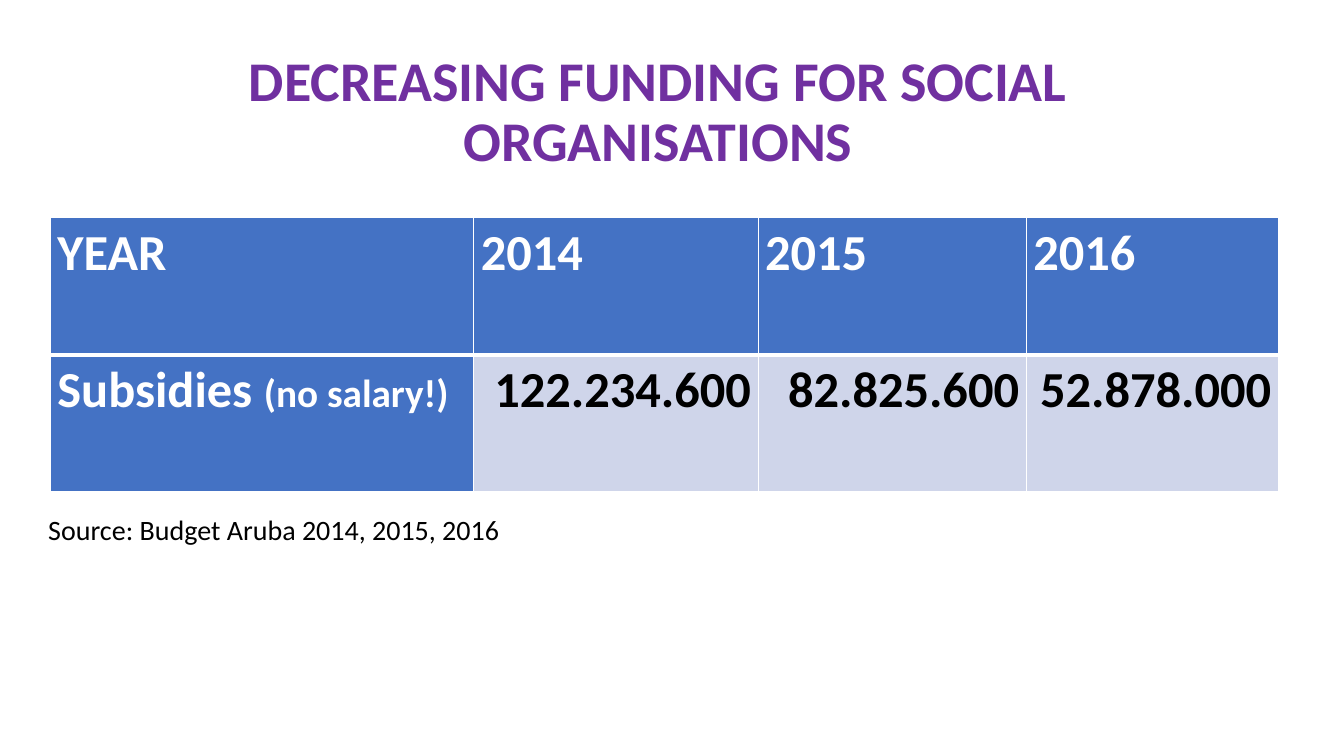
from dataclasses import dataclass

import pptx
import pptx.dml.color
import pptx.enum.text
import pptx.oxml
import pptx.oxml.ns
import pptx.util
from pptx.util import Inches

ALIGN = pptx.enum.text.PP_ALIGN


@dataclass(frozen=True)
class Theme:
    font: str = "Calibri"
    title: str = "7030A0"
    header: str = "4472C4"
    band: str = "CFD5EA"
    light: str = "FFFFFF"
    dark: str = "000000"
    title_size: int = 40
    cell_size: int = 36
    note_size: int = 28
    source_size: int = 20


THEME = Theme()

COLUMN_WIDTHS = (4.2, 2.82, 2.66, 2.5)
ROW_HEIGHT = 1.36
BUDGET_ROWS = (
    ("YEAR", "2014", "2015", "2016"),
    ("Subsidies ", "122.234.600", "82.825.600", "52.878.000"),
)


def rgb(color):
    return pptx.dml.color.RGBColor.from_string(color)


def add_run(paragraph, text, size, color, bold=True):
    run = paragraph.add_run()
    run.text = text
    run.font.name = THEME.font
    run.font.size = pptx.util.Pt(size)
    run.font.bold = bold
    run.font.color.rgb = rgb(color)


def set_borders(cell, top, bottom):
    properties = cell._tc.get_or_add_tcPr()
    for side, width in (("L", 1), ("R", 1), ("T", top), ("B", bottom)):
        properties.append(pptx.oxml.parse_xml(
            f'<a:ln{side} {pptx.oxml.ns.nsdecls("a")} w="{pptx.util.Pt(width)}">'
            f'<a:solidFill><a:srgbClr val="{THEME.light}"/></a:solidFill>'
            f'</a:ln{side}>'
        ))


def add_title(slide, text):
    title = slide.shapes.title
    title.left, title.top = Inches(0.38), Inches(0.4)
    title.width, title.height = Inches(12.29), Inches(1.45)
    frame = title.text_frame
    frame.auto_size = pptx.enum.text.MSO_AUTO_SIZE.NONE
    frame.vertical_anchor = pptx.enum.text.MSO_ANCHOR.MIDDLE
    paragraph = frame.paragraphs[0]
    paragraph.alignment = ALIGN.CENTER
    paragraph.line_spacing = 0.9
    add_run(paragraph, text, THEME.title_size, THEME.title)


def fill_cell(cell, text, is_heading, is_first_row):
    cell.margin_left = cell.margin_right = Inches(0.07)
    cell.margin_top = cell.margin_bottom = 0
    set_borders(cell, *((1, 3) if is_first_row else (3, 1)))
    cell.fill.solid()
    cell.fill.fore_color.rgb = rgb(THEME.header if is_heading else THEME.band)
    paragraph = cell.text_frame.paragraphs[0]
    paragraph.line_spacing = 1.07
    paragraph.alignment = ALIGN.LEFT if is_heading else ALIGN.RIGHT
    add_run(paragraph, text, THEME.cell_size,
            THEME.light if is_heading else THEME.dark)


def add_budget_table(slide):
    budget = slide.shapes.add_table(
        len(BUDGET_ROWS), len(COLUMN_WIDTHS), Inches(0.5), Inches(2.16),
        Inches(sum(COLUMN_WIDTHS)), Inches(ROW_HEIGHT * len(BUDGET_ROWS)),
    ).table
    for column, width in zip(budget.columns, COLUMN_WIDTHS):
        column.width = Inches(width)
    for row_index, texts in enumerate(BUDGET_ROWS):
        budget.rows[row_index].height = Inches(ROW_HEIGHT)
        for column_index, text in enumerate(texts):
            is_heading = row_index == 0 or column_index == 0
            fill_cell(budget.cell(row_index, column_index), text,
                      is_heading, row_index == 0)
    subsidies = budget.cell(1, 0).text_frame.paragraphs[0]
    add_run(subsidies, "(no salary!)", THEME.note_size, THEME.light)


def add_source(slide, text):
    source = slide.shapes.add_textbox(
        Inches(0.38), Inches(5.04), Inches(4.78), Inches(0.44))
    frame = source.text_frame
    frame.word_wrap = False
    frame.auto_size = pptx.enum.text.MSO_AUTO_SIZE.SHAPE_TO_FIT_TEXT
    add_run(frame.paragraphs[0], text, THEME.source_size, THEME.dark, bold=False)


def main():
    presentation = pptx.Presentation()
    presentation.slide_width = Inches(13.33)
    presentation.slide_height = Inches(7.5)
    slide = presentation.slides.add_slide(
        presentation.slide_layouts.get_by_name("Title Only"))
    add_title(slide, "DECREASING FUNDING FOR SOCIAL ORGANISATIONS")
    add_budget_table(slide)
    add_source(slide, "Source: Budget Aruba 2014, 2015, 2016")
    presentation.save("out.pptx")


if __name__ == "__main__":
    main()
